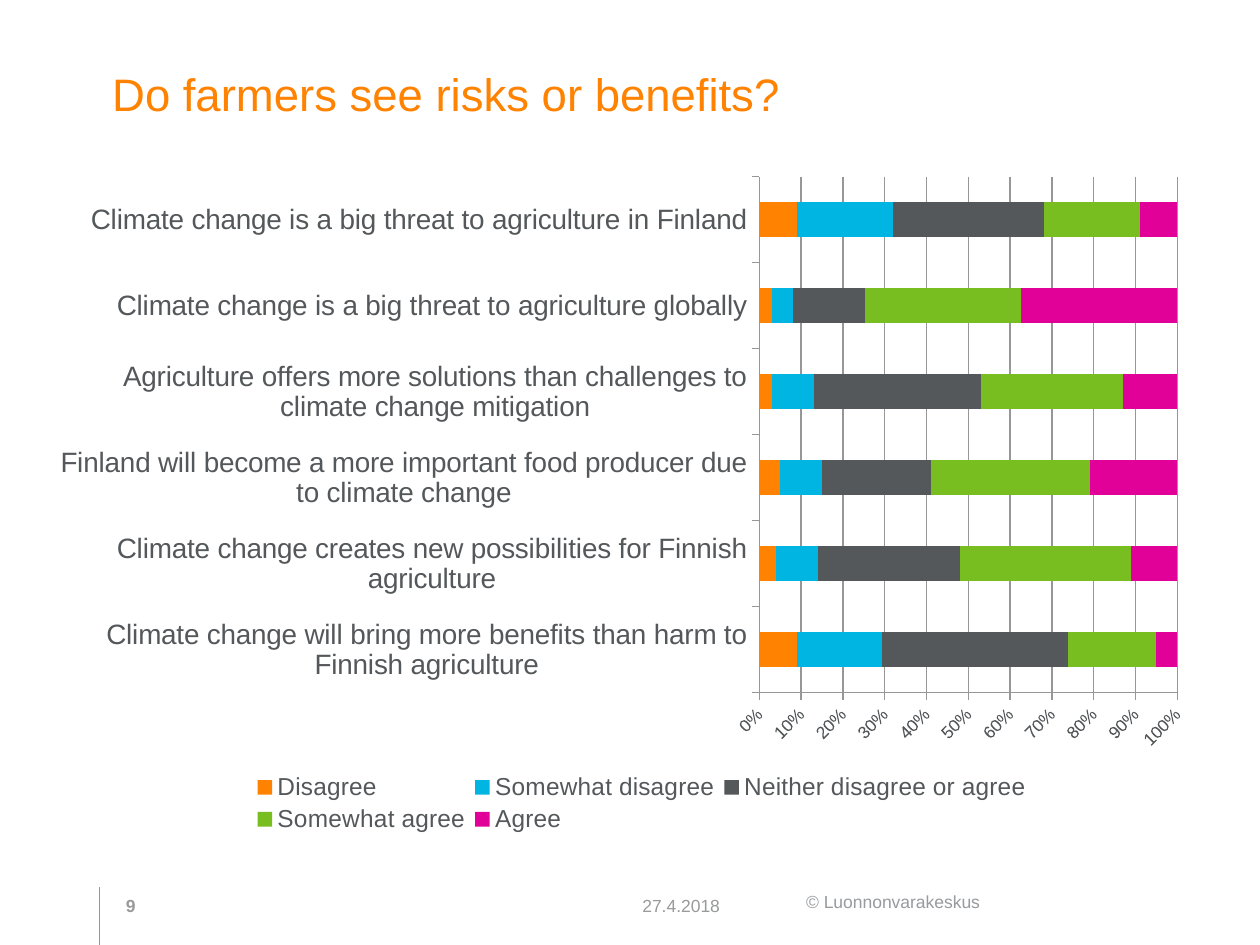
from lxml import etree
from pptx import Presentation
from pptx.chart.data import CategoryChartData
from pptx.dml.color import RGBColor
from pptx.enum.chart import XL_CHART_TYPE, XL_LEGEND_POSITION, XL_TICK_MARK
from pptx.enum.shapes import MSO_CONNECTOR
from pptx.enum.text import MSO_ANCHOR, PP_ALIGN
from pptx.oxml import parse_xml
from pptx.oxml.ns import nsdecls, qn
from pptx.util import Inches, Pt

FONT = "Arial"
COLORS = {
    "orange": "FF8200", "rule": "F97F00", "blue": "00B5E2", "slate": "54585A",
    "green": "78BE20", "pink": "E10098", "footer": "999A9B",
    "copyright": "979B9E", "grid": "979797",
}
STATEMENTS = [
    "Climate change will bring more benefits than harm to Finnish agriculture",
    "Climate change creates new possibilities for Finnish agriculture",
    "Finland will become a more important food producer due to climate change",
    "Agriculture offers more solutions than challenges to climate change mitigation",
    "Climate change is a big threat to agriculture globally",
    "Climate change is a big threat to agriculture in Finland",
]
ANSWERS = [
    ("Disagree", "orange", (9, 4, 5, 3, 3, 9)),
    ("Somewhat disagree", "blue", (20, 10, 10, 10, 5, 23)),
    ("Neither disagree or agree", "slate", (44, 34, 26, 40, 17, 36)),
    ("Somewhat agree", "green", (21, 41, 38, 34, 37, 23)),
    ("Agree", "pink", (5, 11, 21, 13, 37, 9)),
]


def rgb(color):
    return RGBColor.from_string(COLORS[color])


def style_font(font, size, color, bold=False):
    font.name, font.size, font.bold = FONT, Pt(size), bold
    font.color.rgb = rgb(color)


def write_text(shape, text, size=10, color="footer", bold=False,
               anchor=MSO_ANCHOR.BOTTOM):
    frame = shape.text_frame
    frame.word_wrap = True
    frame.vertical_anchor = anchor
    frame.text = text
    paragraph = frame.paragraphs[0]
    paragraph.alignment = PP_ALIGN.LEFT
    style_font(paragraph.runs[0].font, size, color, bold)


def add_title(slide, text):
    title = slide.shapes.title
    title.left, title.top = Inches(0.79), Inches(0.47)
    title.width, title.height = Inches(8.25), Inches(1.14)
    write_text(title, text, size=26, color="orange", anchor=MSO_ANCHOR.TOP)


def add_footer(slide, text, left, width, height=0.3, **text_format):
    box = slide.shapes.add_textbox(
        Inches(left), Inches(7.02), Inches(width), Inches(height))
    write_text(box, text, **text_format)


def add_footer_rule(slide):
    rule = slide.shapes.add_connector(
        MSO_CONNECTOR.STRAIGHT, Inches(0.79), Inches(7.04), Inches(0.79), Inches(7.5))
    rule.line.color.rgb = rgb("rule")
    rule.line.width = Pt(1)
    etree.SubElement(rule._element.spPr, qn("a:effectLst"))


def manual_layout(x, y, w, h, inner=False):
    """Return a c:layout element; lengths are fractions of the chart."""
    target = '<c:layoutTarget val="inner"/>' if inner else ""
    return parse_xml(
        f'<c:layout {nsdecls("c")}><c:manualLayout>{target}'
        '<c:xMode val="edge"/><c:yMode val="edge"/>'
        f'<c:x val="{x}"/><c:y val="{y}"/><c:w val="{w}"/><c:h val="{h}"/>'
        '</c:manualLayout></c:layout>')


def set_layout(parent, layout, before):
    for old in parent.findall(qn("c:layout")):
        parent.remove(old)
    parent.find(qn(before)).addprevious(layout)


def style_axis(axis, label_size):
    axis.major_tick_mark = XL_TICK_MARK.OUTSIDE
    axis.minor_tick_mark = XL_TICK_MARK.NONE
    axis.format.line.color.rgb = rgb("grid")
    axis.format.line.width = Pt(0.75)
    style_font(axis.tick_labels.font, label_size, "slate")


def style_axes(chart):
    style_axis(chart.category_axis, 16)
    chart.category_axis.has_major_gridlines = False
    shares = chart.value_axis
    style_axis(shares, 10)
    shares.minimum_scale, shares.maximum_scale, shares.major_unit = 0, 1, 0.1
    shares.tick_labels.number_format = "0%"
    shares.tick_labels.number_format_is_linked = False
    shares.has_major_gridlines = True
    shares.major_gridlines.format.line.color.rgb = rgb("grid")
    shares.major_gridlines.format.line.width = Pt(0.75)
    labels = shares._element.find(qn("c:txPr")).find(qn("a:bodyPr"))
    labels.set("rot", "-2700000")
    labels.set("vert", "horz")


def add_opinion_chart(slide):
    data = CategoryChartData(number_format="0")
    data.categories = STATEMENTS
    for answer, _, shares in ANSWERS:
        data.add_series(answer, shares)
    chart = slide.shapes.add_chart(
        XL_CHART_TYPE.BAR_STACKED_100, Inches(0.48), Inches(1.3),
        Inches(9.1), Inches(5.4), data).chart
    chart.has_title = False
    style_font(chart.font, 10, "slate")

    plot = chart.plots[0]
    plot.vary_by_categories = False
    plot.gap_width, plot.overlap = 150, 100
    for series, (_, color, _) in zip(plot.series, ANSWERS):
        series.format.fill.solid()
        series.format.fill.fore_color.rgb = rgb(color)
    style_axes(chart)

    chart.has_legend = True
    legend = chart.legend
    legend.position = XL_LEGEND_POSITION.BOTTOM
    legend.include_in_layout = False
    style_font(legend.font, 14, "slate")
    set_layout(legend._element, manual_layout(0.16, 0.89, 0.69, 0.1), "c:overlay")
    plot_area = chart._chartSpace.chart.plotArea
    set_layout(plot_area, manual_layout(0.608, 0.019, 0.366, 0.758, inner=True),
               "c:barChart")


def main():
    deck = Presentation()
    deck.slide_width, deck.slide_height = Inches(10), Inches(7.5)
    slide = deck.slides.add_slide(deck.slide_layouts[5])
    add_footer_rule(slide)
    add_footer(slide, "© Luonnonvarakeskus", 6.3, 1.94, 0.27,
               color="copyright", anchor=MSO_ANCHOR.TOP)
    add_opinion_chart(slide)
    add_title(slide, "Do farmers see risks or benefits?")
    add_footer(slide, "9", 0.9, 0.49, bold=True)
    add_footer(slide, "27.4.2018", 5, 1.23)
    deck.save("out.pptx")


if __name__ == "__main__":
    main()
